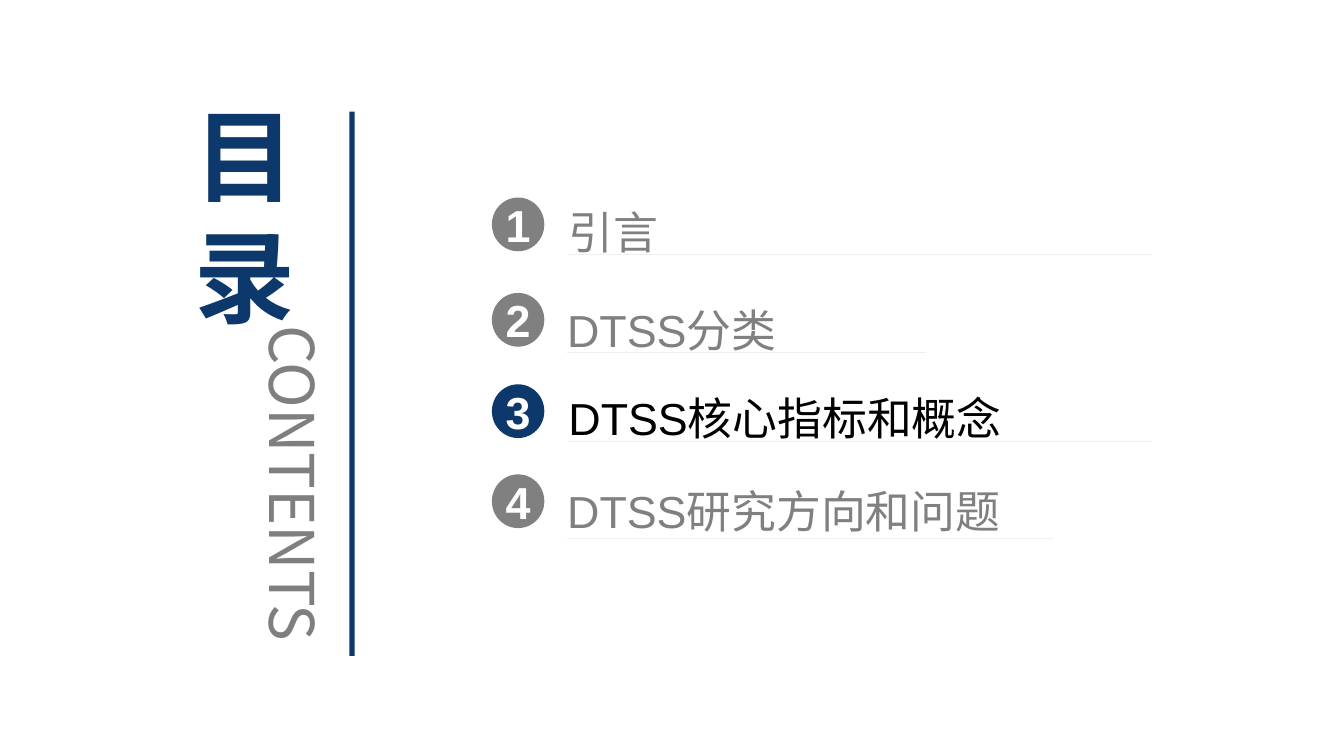
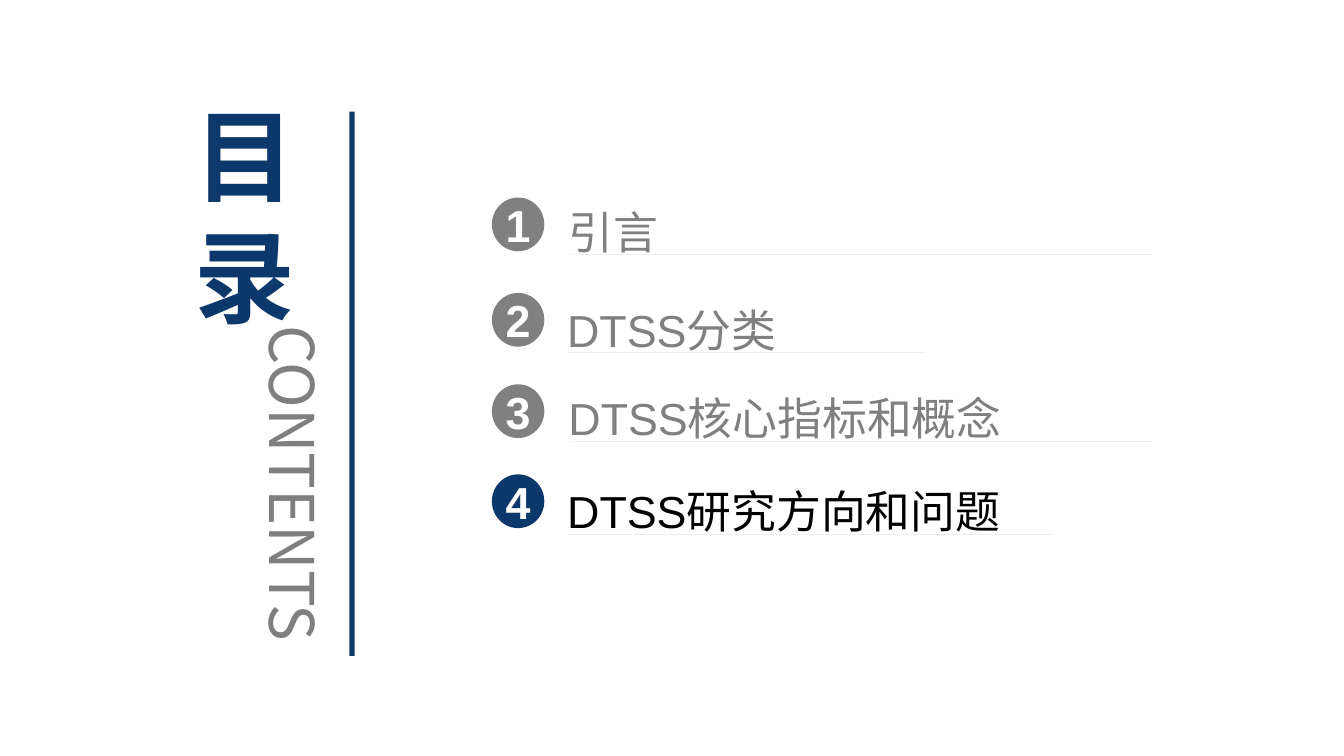
"""Build two contents slides, each with one chapter of the talk marked."""
from pptx import Presentation
from pptx import util as u
from pptx.dml.color import RGBColor
from pptx.enum import shapes, text
from pptx.oxml.ns import qn
from lxml import etree

HUES = {"navy": "0D386B", "grey": "808080", "dim": "7F7F7F", "black": "000000", "white": "FFFFFF"}
SANS, HAN = "Arial", "Noto Sans CJK SC"
HEADS = [
    {"words": "CONTENTS", "place": (0.51, 3.71, 3.35, 0.63), "size": 33, "hue": "dim",
     "bold": False, "turn": 90},
    {"words": "目录", "place": (1.38, 0.66, 1.2, 1.89), "size": 54, "hue": "navy",
     "bold": True, "turn": 0},
]
ROWS = [
    {"label": "引言", "dot": 1.47, "left": 4.23, "wide": 4.34, "mid": 1.66},
    {"label": "DTSS分类", "dot": 2.18, "left": 4.22, "wide": 2.67, "mid": 2.39},
    {"label": "DTSS核心指标和概念", "dot": 2.86, "left": 4.23, "wide": 4.34, "mid": 3.05},
    {"label": "DTSS研究方向和问题", "dot": 3.53, "left": 4.22, "wide": 3.62, "mid": 3.74},
]
SLIDES = [
    {"active": 3, "tall": [0.47, 0.47, 0.47, 0.53]},
    {"active": 4, "tall": [0.47, 0.47, 0.47, 0.47]},
]


def color(name):
    return RGBColor.from_string(HUES[name])


def paint(shape, hue):
    shape.shadow.inherit = False
    shape.fill.solid()
    shape.fill.fore_color.rgb = color(hue)
    shape.line.fill.background()


def write(shape, words, size, hue, font=SANS, bold=False, pad=(0, 0), grow=True,
          align=text.PP_ALIGN.LEFT, anchor=text.MSO_ANCHOR.MIDDLE):
    frame = shape.text_frame
    frame.text = words
    frame.word_wrap = True
    frame.vertical_anchor = anchor
    frame.margin_left = frame.margin_right = u.Inches(pad[0])
    frame.margin_top = frame.margin_bottom = u.Inches(pad[1])
    frame.auto_size = text.MSO_AUTO_SIZE.SHAPE_TO_FIT_TEXT if grow else text.MSO_AUTO_SIZE.NONE
    para = frame.paragraphs[0]
    para.alignment = align
    run = para.runs[0]
    run.font.size = u.Pt(size)
    run.font.bold = bold
    run.font.color.rgb = color(hue)
    run.font.name = font
    etree.SubElement(run.font._element, qn("a:ea")).set("typeface", HAN)
    return para


def add_head(slide):
    for head in HEADS:
        box = slide.shapes.add_textbox(*map(u.Inches, head["place"]))
        box.rotation = head["turn"]
        write(box, head["words"], head["size"], head["hue"], HAN, head["bold"],
              (0.07, 0.04), anchor=text.MSO_ANCHOR.TOP)
    bar = slide.shapes.add_shape(shapes.MSO_SHAPE.RECTANGLE,
                                 *map(u.Inches, (2.6, 0.83, 0.04, 4.05)))
    paint(bar, "navy")


def add_dot(slide, num, top, active):
    dot = slide.shapes.add_shape(shapes.MSO_SHAPE.OVAL, *map(u.Inches, (3.66, top, 0.39, 0.4)))
    paint(dot, "navy" if active else "grey")
    write(dot, str(num), 24, "white", bold=True, grow=False, align=text.PP_ALIGN.CENTER)


def add_row(slide, row, tall, active):
    x, right = u.Inches(row["left"]), u.Inches(row["left"] + row["wide"])
    top, base = u.Inches(row["mid"] - tall / 2), u.Inches(row["mid"] + tall / 2)
    pen = slide.shapes.build_freeform(x, base)
    pen.add_line_segments([(right, base), (x, base)], close=True)
    pen.move_to(x, top)
    pen.add_line_segments([(x, top), (x, top)], close=True)
    item = pen.convert_to_shape()
    paint(item, "grey")
    write(item, row["label"], 24, "black" if active else "grey").line_spacing = 1.3


def main():
    deck = Presentation()
    deck.slide_width = u.Inches(10)
    deck.slide_height = deck.slide_width * 9 // 16
    for page in SLIDES:
        slide = deck.slides.add_slide(deck.slide_layouts[6])
        add_head(slide)
        for num, (row, tall) in enumerate(zip(ROWS, page["tall"]), 1):
            active = num == page["active"]
            add_dot(slide, num, row["dot"], active)
            add_row(slide, row, tall, active)
    deck.save("out.pptx")


if __name__ == "__main__":
    main()
